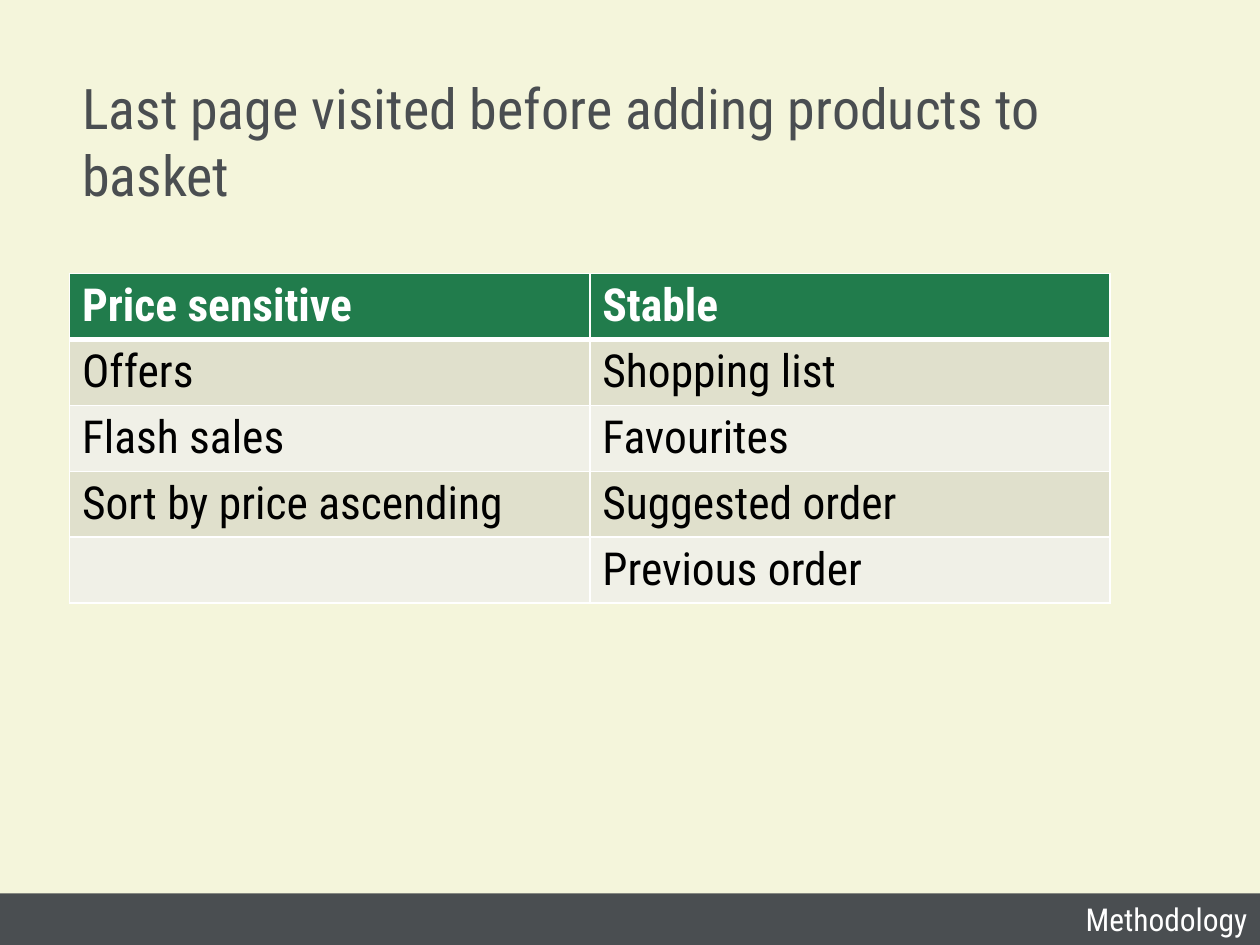
from dataclasses import dataclass

from lxml import etree
from pptx import Presentation
from pptx.dml.color import RGBColor
from pptx.enum import shapes, text
from pptx.oxml.ns import qn
from pptx.util import Cm, Pt

FONT = "Roboto Condensed"
CREAM = RGBColor(0xF4, 0xF5, 0xDB)
SLATE = RGBColor(0x4A, 0x4E, 0x51)
GREEN = RGBColor(0x21, 0x7C, 0x4C)
SAND = RGBColor(0xE0, 0xE0, 0xCC)
PALE = RGBColor(0xF0, 0xF0, 0xE7)
WHITE = RGBColor(0xFF, 0xFF, 0xFF)
BLACK = RGBColor(0, 0, 0)

WIDE, HIGH = Cm(25.4), Cm(19.05)
LEFT, SPAN = Cm(1.4), Cm(20.98)
ROW = Cm(1.33)
BAR = Cm(1.04)


@dataclass
class Style:
    size: int
    color: RGBColor
    bold: bool = False


TITLE = Style(32, SLATE)
NOTE = Style(18, WHITE)
HEAD = Style(26, WHITE, True)
BODY = Style(26, BLACK)

ROWS = [
    ("Price sensitive", "Stable"),
    ("Offers", "Shopping list"),
    ("Flash sales", "Favourites"),
    ("Sort by price ascending", "Suggested order"),
    ("", "Previous order"),
]


def write(frame, words: str, style: Style, align=text.PP_ALIGN.LEFT) -> None:
    para = frame.paragraphs[0]
    para.alignment = align
    # An empty cell still needs its font size to keep the row height.
    fonts = [para.font]
    if words:
        run = para.add_run()
        run.text = words
        fonts = [run.font]
    for font in fonts:
        font.name = FONT
        font.size = Pt(style.size)
        font.bold = style.bold
        font.color.rgb = style.color


def band(slide, top: int, high: int, color: RGBColor):
    """Add a plain block across the full slide width."""
    block = slide.shapes.add_shape(shapes.MSO_SHAPE.RECTANGLE, 0, top, WIDE, high)
    block.shadow.inherit = False
    block.fill.solid()
    block.fill.fore_color.rgb = color
    block.line.fill.background()
    return block


def edge(cell, base: int) -> None:
    """Draw white cell borders; base is the bottom width in points."""
    props = cell._tc.get_or_add_tcPr()
    widths = {"a:lnL": 1, "a:lnR": 1, "a:lnT": 1, "a:lnB": base}
    for spot, (tag, width) in enumerate(widths.items()):
        line = etree.Element(qn(tag), w=str(Pt(width)))
        fill = etree.SubElement(line, qn("a:solidFill"))
        etree.SubElement(fill, qn("a:srgbClr"), val=str(WHITE))
        props.insert(spot, line)


def fill_table(slide) -> None:
    count = len(ROWS)
    table = slide.shapes.add_table(
        count, 2, LEFT, Cm(5.51), SPAN, ROW * count
    ).table
    for r, row in enumerate(ROWS):
        top = r == 0
        color = GREEN if top else (SAND if r % 2 else PALE)
        for c, words in enumerate(row):
            cell = table.cell(r, c)
            cell.fill.solid()
            cell.fill.fore_color.rgb = color
            edge(cell, 3 if top else 1)
            write(cell.text_frame, words, HEAD if top else BODY)
    # The rule under the header is shared with the first body row.
    for cell in table.rows[1].cells:
        cell._tc.tcPr.find(qn("a:lnT")).set("w", str(Pt(3)))


def main() -> None:
    deck = Presentation()
    deck.slide_width, deck.slide_height = WIDE, HIGH
    slide = deck.slides.add_slide(deck.slide_layouts[5])

    band(slide, 0, HIGH, CREAM)
    foot = band(slide, HIGH - BAR, BAR, SLATE).text_frame
    foot.vertical_anchor = text.MSO_ANCHOR.MIDDLE
    write(foot, "Methodology", NOTE, text.PP_ALIGN.RIGHT)

    title = slide.shapes.title
    title.left, title.top, title.width, title.height = LEFT, Cm(1.35), SPAN, Cm(3.1)
    frame = title.text_frame
    frame.word_wrap = True
    frame.auto_size = text.MSO_AUTO_SIZE.NONE
    frame.vertical_anchor = text.MSO_ANCHOR.TOP
    write(frame, "Last page visited before adding products to basket", TITLE)
    # Bring the title in front of the background block.
    slide.shapes._spTree.append(title._element)

    fill_table(slide)
    deck.save("out.pptx")


if __name__ == "__main__":
    main()
